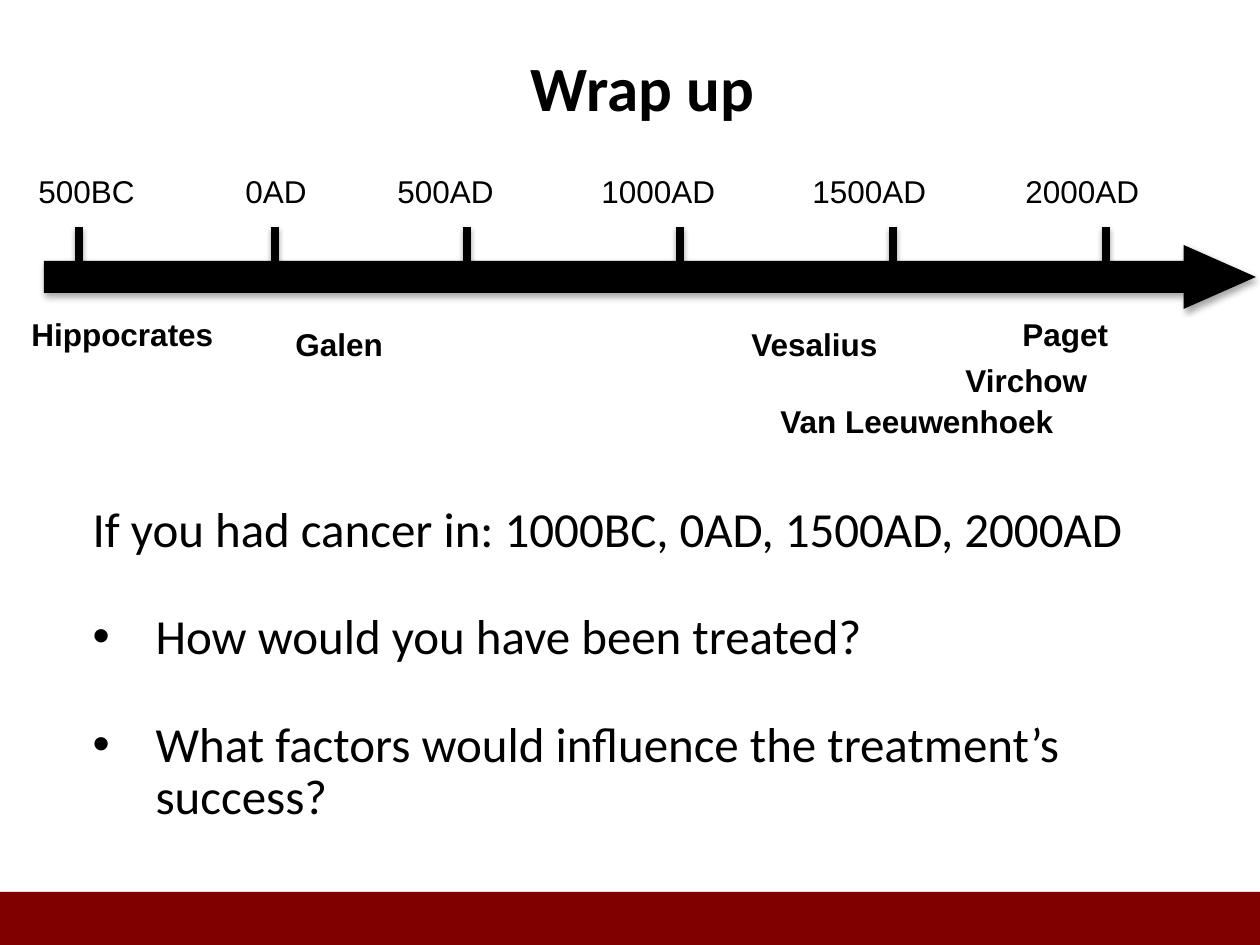
from lxml import etree
from pptx import Presentation
from pptx import util as u
from pptx.dml.color import RGBColor
from pptx.enum import shapes, text
from pptx.oxml import ns

PX = 914400 / 126  # EMU in one px
COLORS = {"ink": "000000", "band": "800000"}


def px(n):
    return u.Emu(round(n * PX))


def rgb(name):
    return RGBColor.from_string(COLORS[name])


def write(p, words, size=18, font="Arial", bold=False, color="ink", align=None):
    r = p.add_run()
    r.text = words
    r.font.size, r.font.name, r.font.bold = u.Pt(size), font, bold
    r.font.color.rgb = rgb(color)
    p.alignment = align


def add_shadow(sp, alpha, dist):
    """Soft black shadow straight below; call after fill and line are set."""
    effects = etree.SubElement(sp._element.spPr, ns.qn("a:effectLst"))
    shadow = etree.SubElement(effects, ns.qn("a:outerShdw"), blurRad="40000",
                              dist=str(dist), dir="5400000", rotWithShape="0")
    color = etree.SubElement(shadow, ns.qn("a:srgbClr"), val=COLORS["ink"])
    etree.SubElement(color, ns.qn("a:alpha"), val=str(alpha * 1000))


class Deck:
    def __init__(self):
        self.prs = Presentation()
        self.prs.slide_width, self.prs.slide_height = px(1260), px(945)
        self.s = self.prs.slides.add_slide(self.prs.slide_layouts[1])

    def place(self, sp, x, y, w, h):
        sp.left, sp.top, sp.width, sp.height = px(x), px(y), px(w), px(h)
        sp.text_frame.auto_size = text.MSO_AUTO_SIZE.NONE
        return sp.text_frame

    def title(self, words, *box):
        tf = self.place(self.s.shapes.title, *box)
        tf.vertical_anchor = text.MSO_ANCHOR.MIDDLE
        write(tf.paragraphs[0], words, size=36, font="Calibri", bold=True,
              align=text.PP_ALIGN.CENTER)

    def body(self, intro, bullets, *box):
        tf = self.place(self.s.placeholders[1], *box)
        for i, words in enumerate([intro, *bullets]):
            p = tf.paragraphs[0] if i == 0 else tf.add_paragraph()
            write(p, words, size=28, font="Calibri", align=text.PP_ALIGN.LEFT)
            p.line_spacing = 0.9
            p.space_before = u.Pt(31 if i else 0)
            pPr = p._p.get_or_add_pPr()
            indent = 457200 if i else 0
            pPr.set("marL", str(indent))
            pPr.set("indent", str(-indent))
            if i:
                etree.SubElement(pPr, ns.qn("a:buFont"), typeface="Arial")
                etree.SubElement(pPr, ns.qn("a:buChar"), char="•")
            else:
                etree.SubElement(pPr, ns.qn("a:buNone"))

    def shape(self, kind, x, y, w, h, color, adjust=()):
        sp = self.s.shapes.add_shape(kind, px(x), px(y), px(w), px(h))
        for i, value in enumerate(adjust):
            sp.adjustments[i] = value
        sp.fill.solid()
        sp.fill.fore_color.rgb = rgb(color)
        sp.line.fill.background()
        add_shadow(sp, 35, 23000)

    def tick(self, x, top, bottom):
        line = self.s.shapes.add_connector(
            shapes.MSO_CONNECTOR.STRAIGHT, px(x), px(top), px(x), px(bottom))
        line.line.color.rgb = rgb("ink")
        line.line.width = u.Pt(4.5)
        add_shadow(line, 38, 20000)

    def label(self, words, x, y, w, bold=False):
        sp = self.s.shapes.add_textbox(px(x), px(y), px(w), px(50))
        tf = sp.text_frame
        tf.word_wrap = False
        tf.auto_size = text.MSO_AUTO_SIZE.SHAPE_TO_FIT_TEXT
        write(tf.paragraphs[0], words, bold=bold)


def main():
    deck = Deck()
    deck.shape(shapes.MSO_SHAPE.RECTANGLE, 0, 892, 1260, 53, "band")
    deck.title("Wrap up", 25, 37, 1235, 99)

    # Timeline: year, label left, label width, tick position
    deck.shape(shapes.MSO_SHAPE.RIGHT_ARROW, 44, 245, 1212, 64, "ink", (0.5, 1.13))
    for year, x, w, tick_x in [
        ("500BC", 26, 122, 79), ("0AD", 233, 87, 275), ("500AD", 385, 122, 467),
        ("1000AD", 589, 140, 680), ("1500AD", 800, 140, 893),
        ("2000AD", 1013, 140, 1106),
    ]:
        deck.label(year, x, 166, w)
        deck.tick(tick_x, 227, 271)

    # People below the timeline: name, left, top, width
    for person in [
        ("Hippocrates", 19, 309, 209), ("Galen", 283, 319, 113),
        ("Vesalius", 739, 319, 155), ("Paget", 1010, 309, 112),
        ("Virchow", 953, 355, 152), ("Van Leeuwenhoek", 768, 396, 305),
    ]:
        deck.label(*person, bold=True)

    # Questions
    deck.body("If you had cancer in: 1000BC, 0AD, 1500AD, 2000AD",
              ["How would you have been treated?",
               "What factors would influence the treatment’s success?"],
              80, 499, 1074, 393)
    deck.prs.save("out.pptx")


if __name__ == "__main__":
    main()
